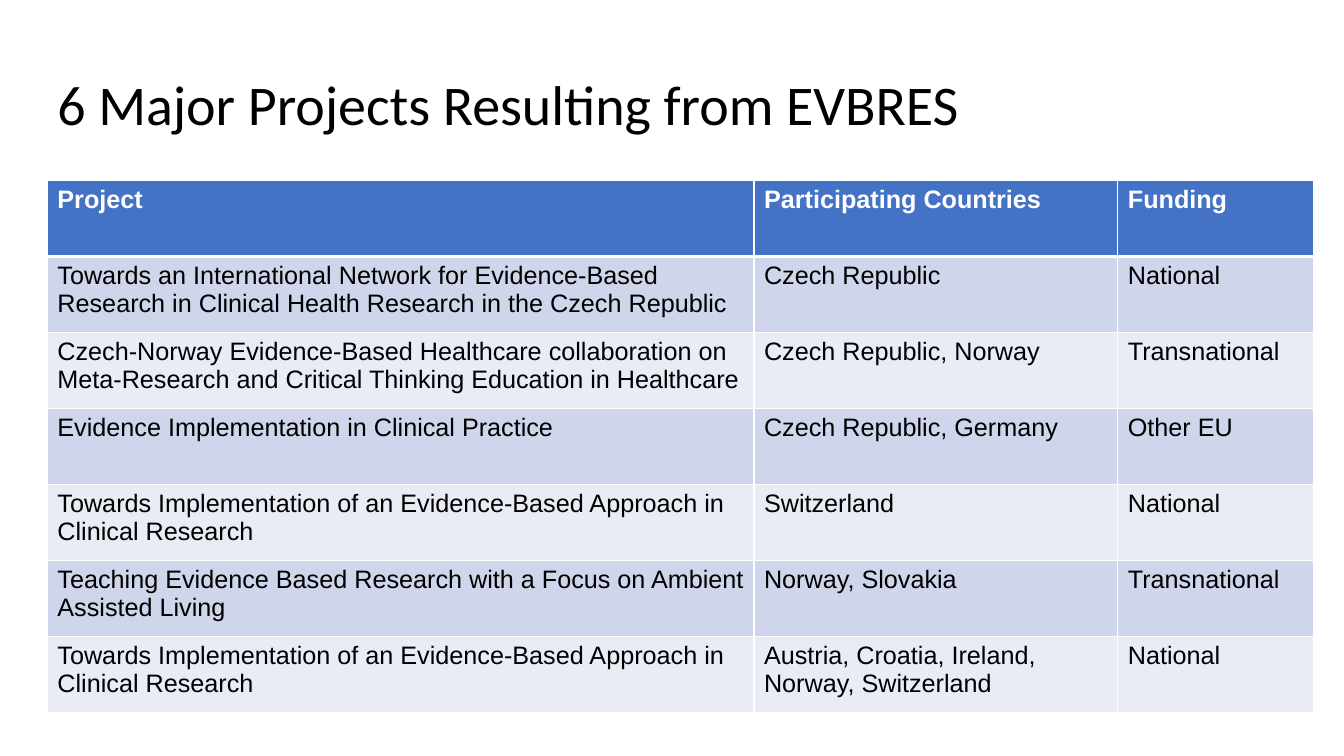
from lxml import etree
from pptx import Presentation
from pptx.dml.color import RGBColor
from pptx.enum import text
from pptx.oxml import ns
from pptx.util import Pt

BLACK = RGBColor(0x00, 0x00, 0x00)
WHITE = RGBColor(0xFF, 0xFF, 0xFF)
HEADER_BLUE = RGBColor(0x44, 0x72, 0xC4)
BAND_DARK = RGBColor(0xCF, 0xD5, 0xEA)
BAND_LIGHT = RGBColor(0xE9, 0xEB, 0xF5)

COLUMN_WIDTHS = (504.72, 259.92, 139.68)
HEADINGS = ("Project", "Participating Countries", "Funding")
PROJECTS = (
    ("Towards an International Network for Evidence-Based Research in Clinical "
     "Health Research in the Czech Republic", "Czech Republic", "National"),
    ("Czech-Norway Evidence-Based Healthcare collaboration on Meta-Research and "
     "Critical Thinking Education in Healthcare",
     "Czech Republic, Norway", "Transnational"),
    ("Evidence Implementation in Clinical Practice",
     "Czech Republic, Germany", "Other EU"),
    ("Towards Implementation of an Evidence-Based Approach in Clinical Research",
     "Switzerland", "National"),
    ("Teaching Evidence Based Research with a Focus on Ambient Assisted Living",
     "Norway, Slovakia", "Transnational"),
    ("Towards Implementation of an Evidence-Based Approach in Clinical Research",
     "Austria, Croatia, Ireland, Norway, Switzerland", "National"),
)


def write_text(frame, content, *, size, font="Arial", color=BLACK, bold=False,
               line_spacing=None):
    paragraph = frame.paragraphs[0]
    paragraph.line_spacing = line_spacing
    run = paragraph.add_run()
    run.text = content
    run.font.name = font
    run.font.size = Pt(size)
    run.font.bold = bold
    run.font.color.rgb = color


def set_borders(cell, **widths):
    """Draw white borders; each keyword is an edge (lnL, lnR, lnT, lnB) in points."""
    properties = cell._tc.get_or_add_tcPr()
    for edge, width in widths.items():
        line = etree.SubElement(properties, ns.qn(f"a:{edge}"), w=str(Pt(width)))
        fill = etree.SubElement(line, ns.qn("a:solidFill"))
        etree.SubElement(fill, ns.qn("a:srgbClr"), val=str(WHITE))


def add_title(slide, left, top, width, height):
    box = slide.shapes.add_textbox(Pt(left), Pt(top), Pt(width), Pt(height))
    frame = box.text_frame
    frame.word_wrap = True
    frame.vertical_anchor = text.MSO_ANCHOR.MIDDLE
    write_text(frame, "6 Major Projects Resulting from EVBRES",
               size=40, font="Calibri", line_spacing=0.9)


def add_project_table(slide, left, top, width, height):
    rows = (HEADINGS,) + PROJECTS
    table = slide.shapes.add_table(len(rows), len(HEADINGS), Pt(left), Pt(top),
                                   Pt(width), Pt(height)).table
    for column, column_width in zip(table.columns, COLUMN_WIDTHS):
        column.width = Pt(column_width)
    for row_index, row in enumerate(rows):
        is_header = row_index == 0
        band = BAND_DARK if row_index % 2 else BAND_LIGHT
        for column_index, content in enumerate(row):
            cell = table.cell(row_index, column_index)
            set_borders(cell, lnL=1, lnR=1, lnT=3 if row_index == 1 else 1,
                        lnB=3 if is_header else 1)
            cell.fill.solid()
            cell.fill.fore_color.rgb = HEADER_BLUE if is_header else band
            write_text(cell.text_frame, content, size=18, bold=is_header,
                       color=WHITE if is_header else BLACK)


def main():
    presentation = Presentation()
    presentation.slide_width = Pt(960)
    presentation.slide_height = Pt(540)
    slide = presentation.slides.add_slide(presentation.slide_layouts[6])
    add_title(slide, 33.84, 24.48, 828, 104.4)
    add_project_table(slide, 33.84, 128.88, sum(COLUMN_WIDTHS), 380.16)
    presentation.save("out.pptx")


if __name__ == "__main__":
    main()
